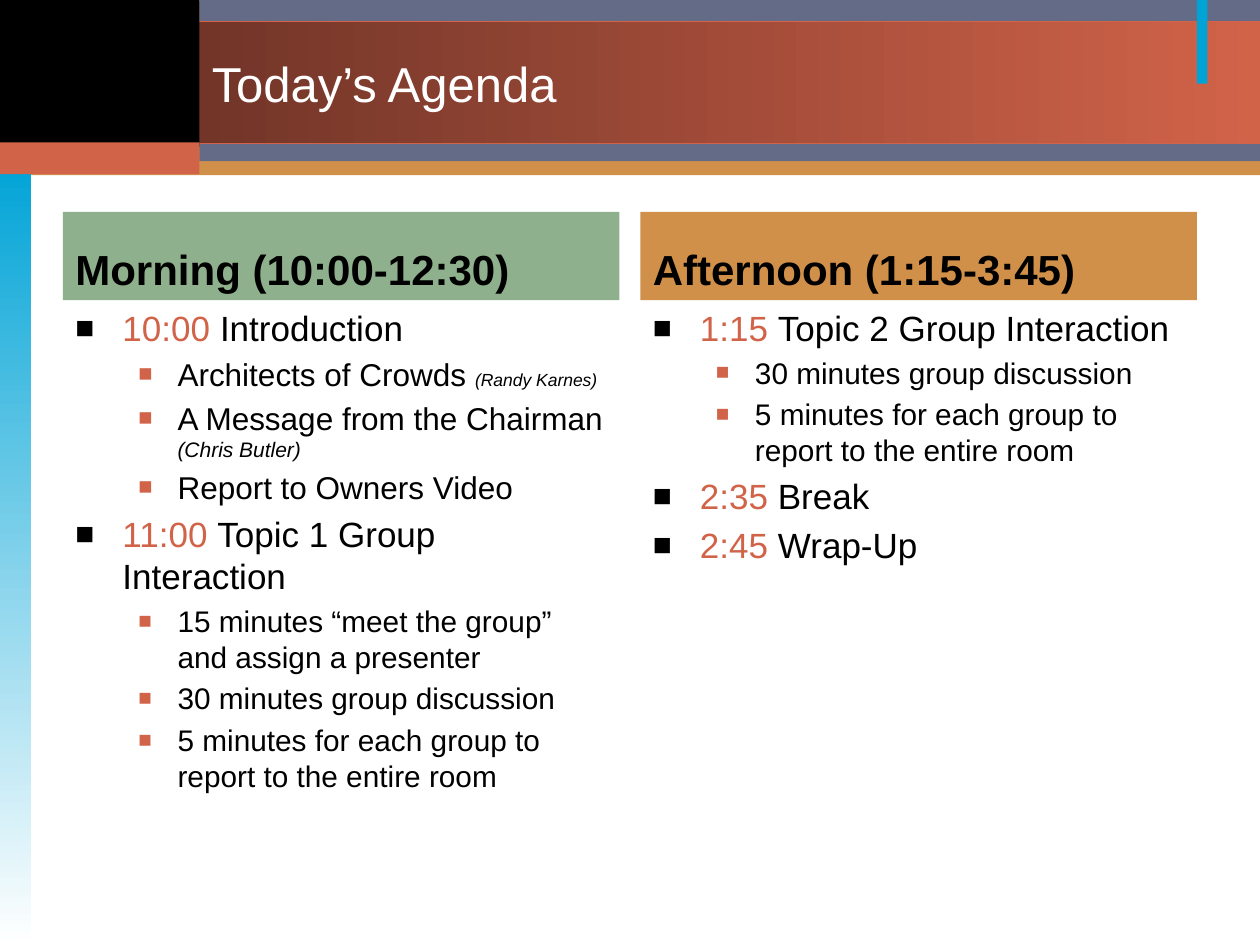
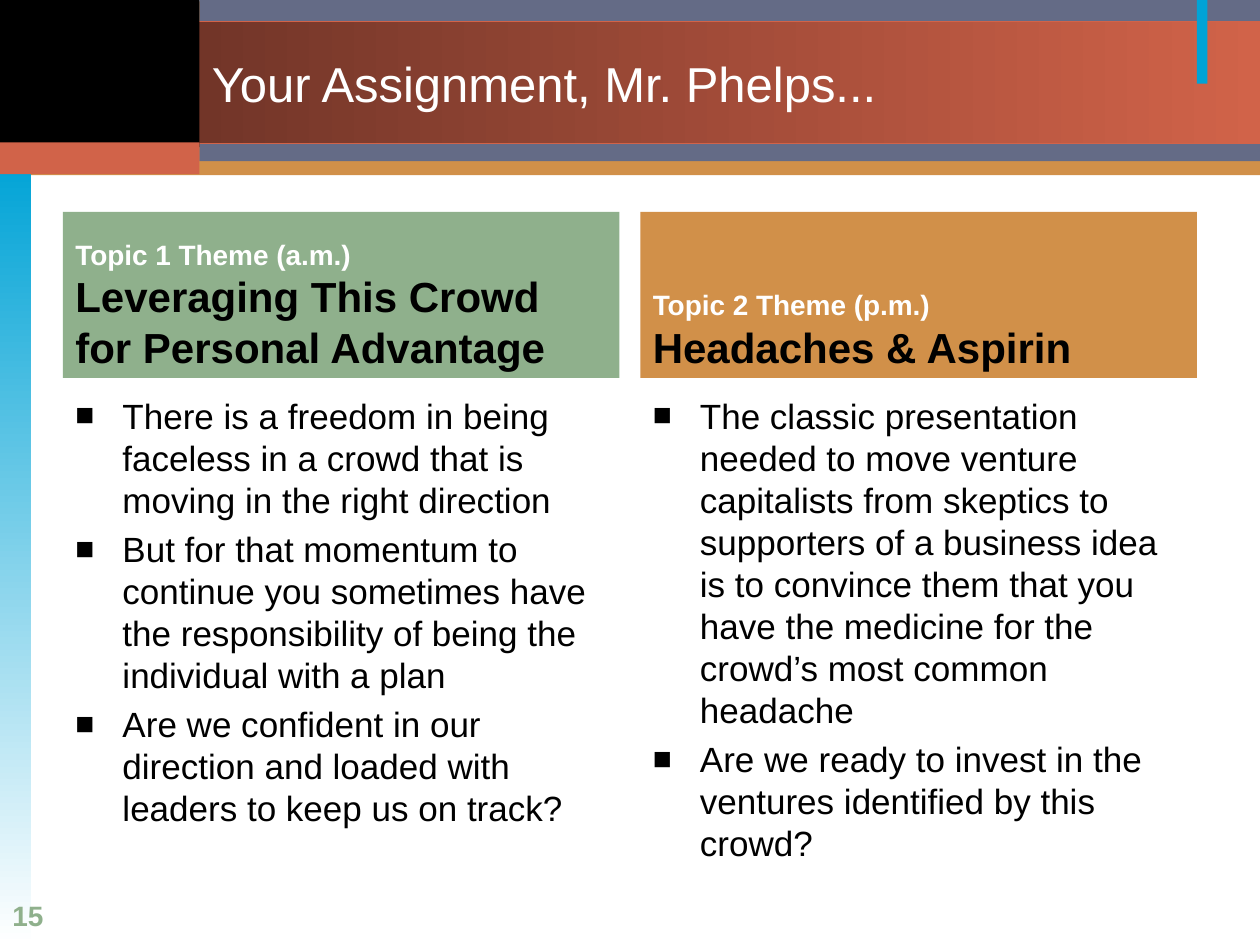
from dataclasses import dataclass

from lxml import etree
from pptx import Presentation
from pptx.dml.color import RGBColor
from pptx.enum.shapes import MSO_SHAPE
from pptx.enum.text import MSO_ANCHOR
from pptx.oxml.ns import qn
from pptx.shapes.base import BaseShape
from pptx.slide import Slide
from pptx.text.text import TextFrame
from pptx.util import Cm, Pt

RECTANGLE = MSO_SHAPE.RECTANGLE
TOP, MIDDLE, BOTTOM = MSO_ANCHOR.TOP, MSO_ANCHOR.MIDDLE, MSO_ANCHOR.BOTTOM

FONT = "Arial"
BLACK, WHITE = "000000", "FFFFFF"
RUST, DARK_RUST = "D16349", "602C22"
SLATE, OCHRE, SAGE, CYAN = "646B86", "D19049", "8FB08C", "00A3D6"

SLIDE_WIDTH, SLIDE_HEIGHT = 25.4, 19.05
CORNER_WIDTH = 4.02
COLUMN_LEFT, COLUMN_WIDTH, COLUMN_GAP = 1.27, 11.22, 0.42
HEADING_TOP, BODY_BOTTOM = 4.27, 17.02
HEADING_COLORS = (SAGE, OCHRE)


@dataclass(frozen=True)
class Box:
    left: float
    top: float
    width: float
    height: float


@dataclass(frozen=True)
class Band:
    box: Box
    color: str
    end_color: str = ""
    angle: int = 0
    line_color: str = ""


@dataclass(frozen=True)
class Piece:
    text: str
    color: str = ""
    size: float = 0
    italic: bool = False


@dataclass(frozen=True)
class Bullet:
    indent: float
    hanging: float
    color: str
    percent: int


@dataclass(frozen=True)
class Line:
    pieces: tuple[Piece, ...]
    size: float
    color: str = BLACK
    bold: bool = False
    bullet: Bullet | None = None


@dataclass(frozen=True)
class Column:
    heading: tuple[Line, ...]
    body: tuple[Line, ...]


@dataclass(frozen=True)
class Page:
    title: str
    heading_height: float
    body_gap: float
    columns: tuple[Column, ...]
    number: str = ""


MAIN_BULLET = Bullet(0.95, 0.95, BLACK, 90)
SUB_BULLET = Bullet(2.06, 0.79, RUST, 75)

BANDS = (
    Band(Box(0, 0.03, SLIDE_WIDTH, 3.5), OCHRE),
    Band(Box(CORNER_WIDTH, 0, SLIDE_WIDTH - CORNER_WIDTH, 3.25), SLATE),
    Band(Box(0, 0.43, SLIDE_WIDTH, 2.46), DARK_RUST, RUST, 0, RUST),
    Band(Box(0, 3.18, 0.63, SLIDE_HEIGHT - 3.18), CYAN, WHITE, 270),
    Band(Box(24.13, 0, 0.21, 1.69), CYAN),
    Band(Box(0, 0, CORNER_WIDTH, 2.97), BLACK),
    Band(Box(0, 2.87, CORNER_WIDTH, 0.64), RUST),
)


def main_line(text: str) -> Line:
    return Line((Piece(text),), 20, bullet=MAIN_BULLET)


def timed_line(time: str, topic: str) -> Line:
    return Line((Piece(time + " ", RUST), Piece(topic)), 20, bullet=MAIN_BULLET)


def sub_line(text: str, size: float = 17, speaker: str = "", speaker_size: float = 0) -> Line:
    pieces = (Piece(text),)
    if speaker:
        pieces = (Piece(text + " "), Piece(speaker, size=speaker_size, italic=True))
    return Line(pieces, size, bullet=SUB_BULLET)


def heading_line(text: str) -> Line:
    return Line((Piece(text),), 24, bold=True)


def theme_line(text: str) -> Line:
    return Line((Piece(text),), 16, WHITE, True)


GROUP_WORK = (
    sub_line("30 minutes group discussion"),
    sub_line("5 minutes for each group to report to the entire room"),
)

PAGES = (
    Page("Today’s Agenda", 1.78, 0, (
        Column(
            (heading_line("Morning (10:00-12:30)"),),
            (
                timed_line("10:00", "Introduction"),
                sub_line("Architects of Crowds", 18, "(Randy Karnes)", 10),
                sub_line("A Message from the Chairman", 18, "(Chris Butler)", 12),
                sub_line("Report to Owners Video", 18),
                timed_line("11:00", "Topic 1 Group Interaction"),
                sub_line("15 minutes “meet the group” and assign a presenter"),
                *GROUP_WORK,
            ),
        ),
        Column(
            (heading_line("Afternoon (1:15-3:45)"),),
            (
                timed_line("1:15", "Topic 2 Group Interaction"),
                *GROUP_WORK,
                timed_line("2:35", "Break"),
                timed_line("2:45", "Wrap-Up"),
            ),
        ),
    )),
    Page("Your Assignment, Mr. Phelps...", 3.35, 0.2, (
        Column(
            (
                theme_line("Topic 1 Theme (a.m.)"),
                heading_line("Leveraging This Crowd for Personal Advantage"),
            ),
            (
                main_line("There is a freedom in being faceless in a crowd "
                          "that is moving in the right direction"),
                main_line("But for that momentum to continue you sometimes have "
                          "the responsibility of being the individual with a plan"),
                main_line("Are we confident in our direction and loaded "
                          "with leaders to keep us on track?"),
            ),
        ),
        Column(
            (theme_line("Topic 2 Theme (p.m.)"), heading_line("Headaches & Aspirin")),
            (
                main_line("The classic presentation needed to move venture capitalists "
                          "from skeptics to supporters of a business idea is to convince "
                          "them that you have the medicine for the crowd’s most common "
                          "headache"),
                main_line("Are we ready to invest in the ventures identified by this crowd?"),
            ),
        ),
    ), "15"),
)


def rgb(color: str) -> RGBColor:
    return RGBColor.from_string(color)


def place(box: Box) -> tuple[Cm, Cm, Cm, Cm]:
    return Cm(box.left), Cm(box.top), Cm(box.width), Cm(box.height)


def draw_band(slide: Slide, band: Band) -> BaseShape:
    shape = slide.shapes.add_shape(RECTANGLE, *place(band.box))
    shape.shadow.inherit = False
    if band.end_color:
        shape.fill.gradient()
        shape.fill.gradient_angle = band.angle
        for stop, color in zip(shape.fill.gradient_stops, (band.color, band.end_color)):
            stop.color.rgb = rgb(color)
    else:
        shape.fill.solid()
        shape.fill.fore_color.rgb = rgb(band.color)
    if band.line_color:
        shape.line.color.rgb = rgb(band.line_color)
        shape.line.width = Pt(0.75)
    else:
        shape.line.fill.background()
    return shape


def add_bullet(paragraph, bullet: Bullet) -> None:
    properties = paragraph._p.get_or_add_pPr()
    properties.set("marL", str(Cm(bullet.indent)))
    properties.set("indent", str(-Cm(bullet.hanging)))
    color = etree.SubElement(properties, qn("a:buClr"))
    etree.SubElement(color, qn("a:srgbClr"), val=bullet.color)
    etree.SubElement(properties, qn("a:buSzPct"), val=str(bullet.percent * 1000))
    etree.SubElement(properties, qn("a:buFont"), typeface=FONT)
    etree.SubElement(properties, qn("a:buChar"), char="■")


def write_lines(frame: TextFrame, lines: tuple[Line, ...], anchor: MSO_ANCHOR) -> None:
    frame.word_wrap = True
    frame.vertical_anchor = anchor
    for index, line in enumerate(lines):
        paragraph = frame.add_paragraph() if index else frame.paragraphs[0]
        paragraph.alignment = None
        if line.bullet:
            add_bullet(paragraph, line.bullet)
            if index:
                paragraph.space_before = Pt(line.size * 0.2)
        paragraph.font.name = FONT
        paragraph.font.size = Pt(line.size)
        paragraph.font.bold = line.bold
        paragraph.font.color.rgb = rgb(line.color)
        for piece in line.pieces:
            run = paragraph.add_run()
            run.text = piece.text
            if piece.color:
                run.font.color.rgb = rgb(piece.color)
            if piece.size:
                run.font.size = Pt(piece.size)
            if piece.italic:
                run.font.italic = True


def draw_text(slide: Slide, box: Box, lines: tuple[Line, ...], anchor: MSO_ANCHOR = TOP) -> None:
    write_lines(slide.shapes.add_textbox(*place(box)).text_frame, lines, anchor)


def draw_column(slide: Slide, page: Page, index: int) -> None:
    column = page.columns[index]
    left = COLUMN_LEFT + index * (COLUMN_WIDTH + COLUMN_GAP)
    heading_box = Box(left, HEADING_TOP, COLUMN_WIDTH, page.heading_height)
    heading = draw_band(slide, Band(heading_box, HEADING_COLORS[index]))
    write_lines(heading.text_frame, column.heading, BOTTOM)
    body_top = HEADING_TOP + page.heading_height + page.body_gap
    draw_text(slide, Box(left, body_top, COLUMN_WIDTH, BODY_BOTTOM - body_top), column.body)


def draw_page(presentation: Presentation, page: Page) -> None:
    slide = presentation.slides.add_slide(presentation.slide_layouts[6])
    for band in BANDS:
        draw_band(slide, band)
    title = Line((Piece(page.title),), 28, WHITE)
    draw_text(slide, Box(CORNER_WIDTH, 0.58, 19.05, 2.18), (title,), MIDDLE)
    for index in range(len(page.columns)):
        draw_column(slide, page, index)
    if page.number:
        number = Line((Piece(page.number),), 16, SAGE, True)
        draw_text(slide, Box(0, 17.98, 5.92, 1.07), (number,))


def main() -> None:
    presentation = Presentation()
    presentation.slide_width = Cm(SLIDE_WIDTH)
    presentation.slide_height = Cm(SLIDE_HEIGHT)
    for page in PAGES:
        draw_page(presentation, page)
    presentation.save("out.pptx")


if __name__ == "__main__":
    main()
